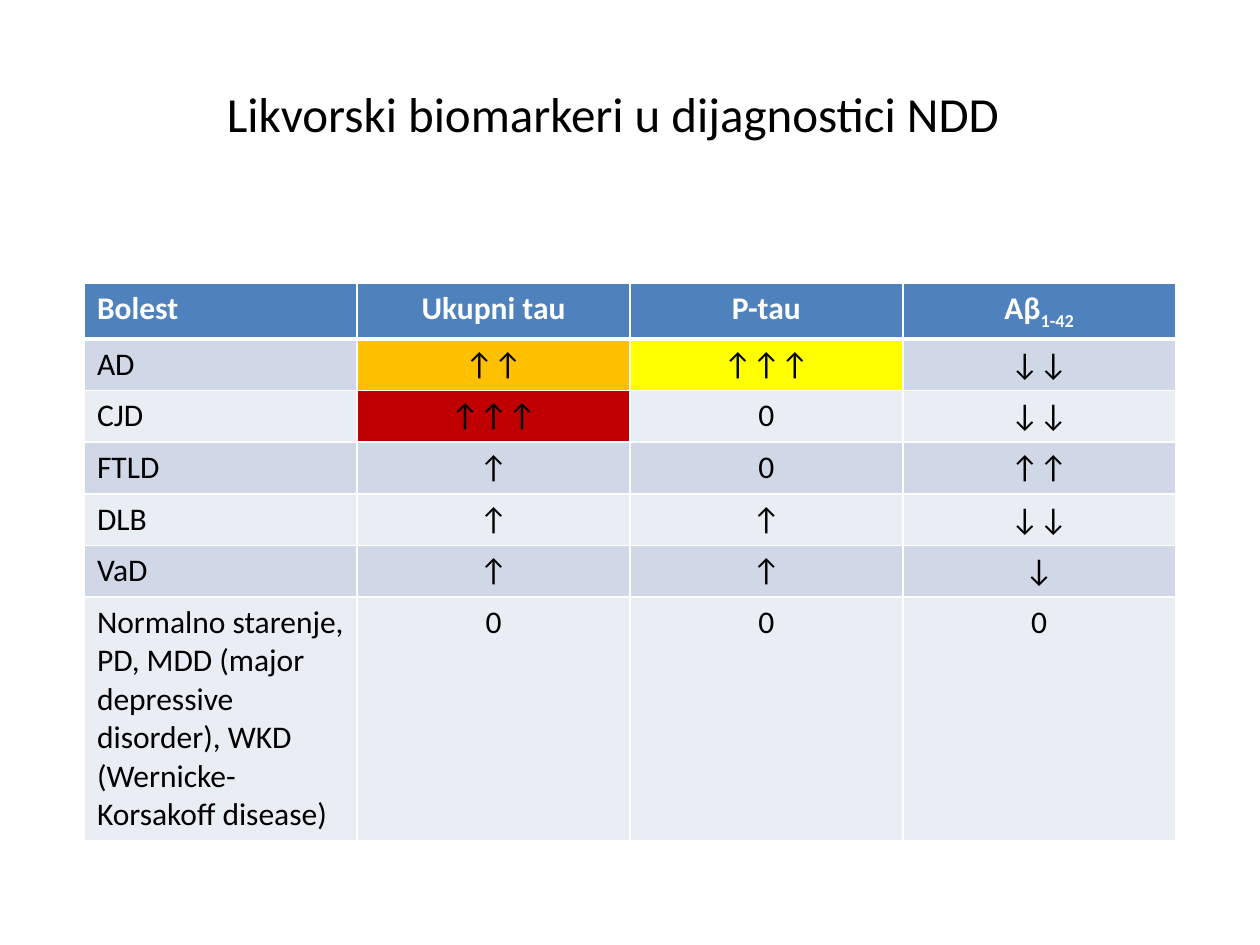
from dataclasses import dataclass

from lxml.etree import SubElement
from pptx import Presentation
from pptx.dml.color import RGBColor
from pptx.enum.text import MSO_AUTO_SIZE, PP_ALIGN
from pptx.oxml.ns import qn
from pptx.util import Inches, Pt


@dataclass(frozen=True)
class Theme:
    font: str = "Calibri"
    title_size: int = 28
    table_size: int = 18
    text: str = "000000"
    white: str = "FFFFFF"
    header: str = "4F81BD"
    bands: tuple[str, str] = ("D0D8E8", "E9EDF4")
    orange: str = "FFC000"
    yellow: str = "FFFF00"
    red: str = "C00000"
    border: int = 1
    header_rule: int = 3


@dataclass(frozen=True)
class Disease:
    name: str
    total_tau: str
    p_tau: str
    amyloid: str
    total_tau_fill: str | None = None
    p_tau_fill: str | None = None


THEME = Theme()
TITLE = "Likvorski biomarkeri u dijagnostici NDD"
HEADINGS = ("Bolest", "Ukupni tau", "P-tau", "Aβ")
AMYLOID_SUBSCRIPT = "1-42"
DISEASES = (
    Disease("AD", "↑↑", "↑↑↑", "↓↓", THEME.orange, THEME.yellow),
    Disease("CJD", "↑↑↑", "0", "↓↓", THEME.red),
    Disease("FTLD", "↑", "0", "↑↑"),
    Disease("DLB", "↑", "↑", "↓↓"),
    Disease("VaD", "↑", "↑", "↓"),
    Disease(
        "Normalno starenje, PD, MDD (major depressive disorder), "
        "WKD (Wernicke-Korsakoff disease)", "0", "0", "0"),
)


def format_runs(paragraph, size: int, color: str, bold: bool = False) -> None:
    for run in paragraph.runs:
        run.font.name = THEME.font
        run.font.size = Pt(size)
        run.font.bold = bold
        run.font.color.rgb = RGBColor.from_string(color)


def add_borders(cell, top: int, bottom: int) -> None:
    """Draw white borders; must run before the cell is filled."""
    properties = cell._tc.get_or_add_tcPr()
    widths = {"L": THEME.border, "R": THEME.border, "T": top, "B": bottom}
    for side, width in widths.items():
        line = SubElement(properties, qn(f"a:ln{side}"), w=str(Pt(width)))
        fill = SubElement(line, qn("a:solidFill"))
        SubElement(fill, qn("a:srgbClr"), val=THEME.white)


def fill_cell(cell, text: str, fill: str, row: int, column: int) -> None:
    is_header = row == 0
    add_borders(
        cell,
        top=THEME.header_rule if row == 1 else THEME.border,
        bottom=THEME.header_rule if is_header else THEME.border)
    cell.fill.solid()
    cell.fill.fore_color.rgb = RGBColor.from_string(fill)
    paragraph = cell.text_frame.paragraphs[0]
    paragraph.text = text
    paragraph.alignment = PP_ALIGN.CENTER if column else PP_ALIGN.LEFT
    if is_header and column == len(HEADINGS) - 1:
        subscript = paragraph.add_run()
        subscript.text = AMYLOID_SUBSCRIPT
        subscript.font._element.set("baseline", "-25000")
    format_runs(paragraph, THEME.table_size,
                THEME.white if is_header else THEME.text, is_header)


def add_biomarker_table(slide) -> None:
    row_height = Inches(0.41)
    row_count = len(DISEASES) + 1
    table = slide.shapes.add_table(
        row_count, len(HEADINGS), Inches(0.67), Inches(2.25),
        Inches(8.66), row_height * row_count).table
    for table_row in table.rows:
        table_row.height = row_height
    for column, heading in enumerate(HEADINGS):
        fill_cell(table.cell(0, column), heading, THEME.header, 0, column)
    for row, disease in enumerate(DISEASES, start=1):
        band = THEME.bands[(row - 1) % 2]
        values = (disease.name, disease.total_tau, disease.p_tau, disease.amyloid)
        fills = (None, disease.total_tau_fill, disease.p_tau_fill, None)
        for column, (value, highlight) in enumerate(zip(values, fills)):
            fill_cell(table.cell(row, column), value, highlight or band, row, column)


def add_title(slide) -> None:
    frame = slide.shapes.add_textbox(
        Inches(1.61), Inches(0.61), Inches(6.66), Inches(0.57)).text_frame
    frame.word_wrap = True
    frame.auto_size = MSO_AUTO_SIZE.SHAPE_TO_FIT_TEXT
    frame.margin_left = Inches(0.19)
    frame.text = TITLE
    format_runs(frame.paragraphs[0], THEME.title_size, THEME.text)


def main() -> None:
    presentation = Presentation()
    presentation.slide_width = Inches(10)
    presentation.slide_height = Inches(7.5)
    slide = presentation.slides.add_slide(presentation.slide_layouts[6])
    add_biomarker_table(slide)
    add_title(slide)
    presentation.save("out.pptx")


if __name__ == "__main__":
    main()
